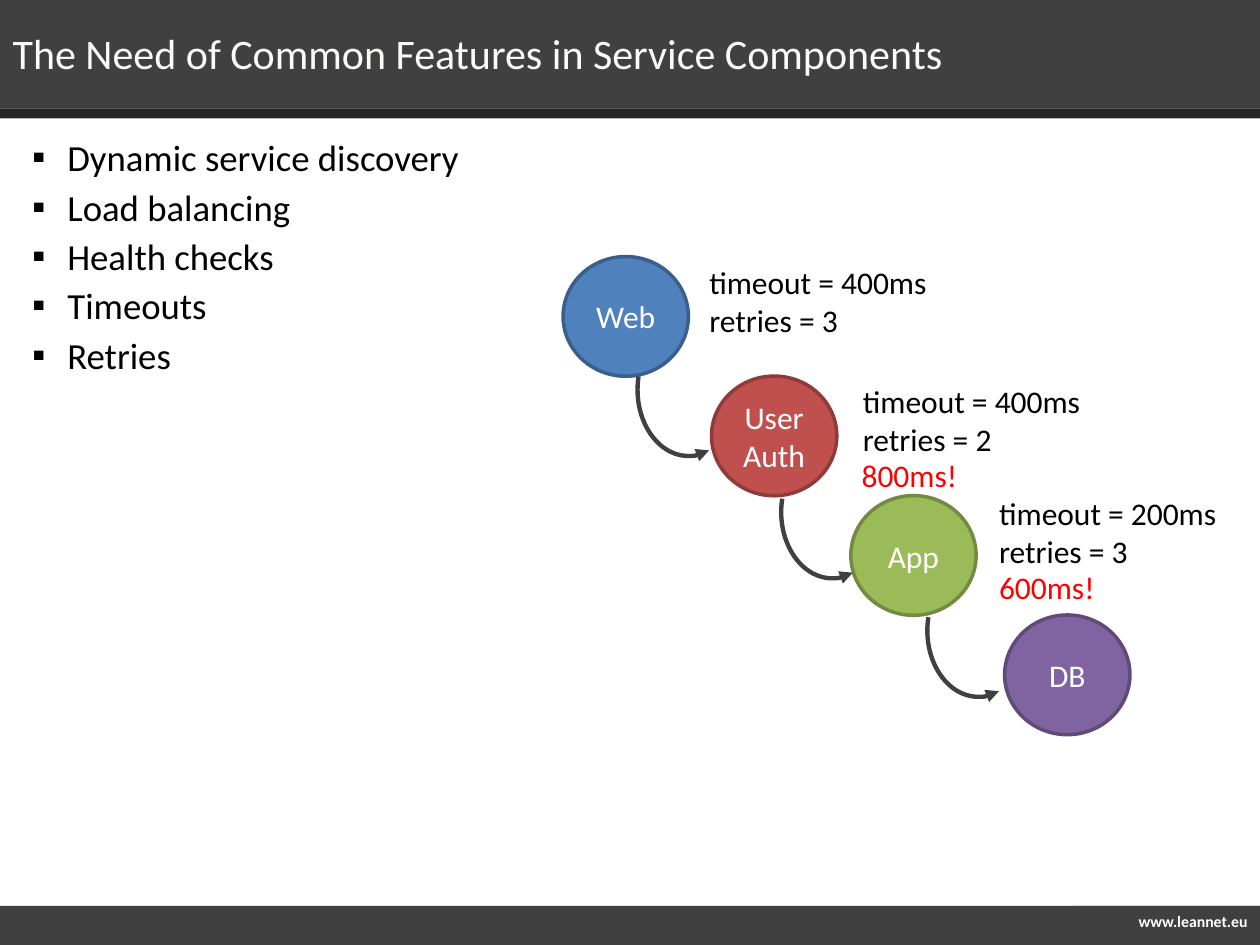
from pptx import Presentation
from pptx.dml.color import RGBColor
from pptx.enum.shapes import MSO_SHAPE
from pptx.enum.text import MSO_ANCHOR, MSO_AUTO_SIZE, PP_ALIGN
from pptx.oxml.ns import qn
from pptx.util import Pt
from lxml.etree import SubElement

COLORS = {
    "band": "404040", "stripe": "262626", "title": "FAFBF9",
    "white": "FFFFFF", "black": "000000", "alert": "FF0000",
    "blue": "4F81BD", "blue edge": "3A5F8C",
    "red": "C0504D", "red edge": "8E3B39",
    "green": "9BBB59", "green edge": "738A42",
    "purple": "8064A2", "purple edge": "5F4A78",
}


def rgb(name):
    return RGBColor.from_string(COLORS[name])


def add_text(para, text, size, color, bold=False):
    span = para.add_run()
    span.text = text
    span.font.name = "Calibri"
    span.font.size = Pt(size)
    span.font.bold = bold
    span.font.color.rgb = rgb(color)


deck = Presentation()
deck.slide_width, deck.slide_height = Pt(720), Pt(540)
page = deck.slides.add_slide(deck.slide_layouts[1])
shapes = page.shapes
title, body = page.placeholders

# Header and footer bands
for left, top, width, height, color, text in [
    (0, 0, 720, 62, "band", ""),
    (0, 517.7, 720, 22.3, "band", ""),
    (613.4, 517.7, 106.6, 22.3, "band", "www.leannet.eu"),
    (0, 62, 720, 5.7, "stripe", ""),
]:
    band = shapes.add_shape(MSO_SHAPE.RECTANGLE, Pt(left), Pt(top), Pt(width), Pt(height))
    band.shadow.inherit = False
    band.fill.solid()
    band.fill.fore_color.rgb = rgb(color)
    band.line.fill.background()
    if text:
        band.text_frame.vertical_anchor = MSO_ANCHOR.TOP
        para = band.text_frame.paragraphs[0]
        para.alignment = PP_ALIGN.RIGHT
        add_text(para, text, 9, "white", bold=True)

# Title and list stand in front of the bands
for holder, left, top, width, height in [
    (title, 0, 0, 720, 60),
    (body, 13.5, 74.2, 386, 309.6),
]:
    holder.left, holder.top, holder.width, holder.height = Pt(left), Pt(top), Pt(width), Pt(height)
    holder.text_frame.auto_size = MSO_AUTO_SIZE.NONE
    shapes._spTree.append(holder._element)

title.text_frame.vertical_anchor = MSO_ANCHOR.MIDDLE
para = title.text_frame.paragraphs[0]
para.alignment = PP_ALIGN.LEFT
add_text(para, "The Need of Common Features in Service Components", 24, "title")

frame = body.text_frame
frame.margin_left = frame.margin_right = Pt(5)
frame.margin_top = frame.margin_bottom = Pt(3)
features = ["Dynamic service discovery", "Load balancing", "Health checks", "Timeouts", "Retries"]
for index, feature in enumerate(features):
    para = frame.paragraphs[0] if index == 0 else frame.add_paragraph()
    para.space_before = Pt(3 if index else 0)
    properties = para._p.get_or_add_pPr()
    properties.set("marL", str(Pt(20)))
    properties.set("indent", str(-Pt(20)))
    SubElement(properties, qn("a:buFont"), typeface="Calibri")
    SubElement(properties, qn("a:buChar"), char="▪")
    add_text(para, feature, 21, "black")

# Chain of services
for left, top, name, color in [
    (321.8, 146.6, "Web", "blue"),
    (406.6, 214.9, "User Auth", "red"),
    (486.2, 283.2, "App", "green"),
    (574.1, 351.4, "DB", "purple"),
]:
    circle = shapes.add_shape(MSO_SHAPE.OVAL, Pt(left), Pt(top), Pt(71.6), Pt(68.4))
    circle.shadow.inherit = False
    circle.fill.solid()
    circle.fill.fore_color.rgb = rgb(color)
    circle.line.color.rgb = rgb(color + " edge")
    circle.line.width = Pt(2)
    frame = circle.text_frame
    frame.margin_left = frame.margin_right = 0
    frame.word_wrap = True
    frame.vertical_anchor = MSO_ANCHOR.MIDDLE
    para = frame.paragraphs[0]
    para.alignment = PP_ALIGN.CENTER
    add_text(para, name, 18, "white")

# Curved arrows from each service to the next
for left, top in [(364.3, 185), (446.4, 254.9), (529.9, 322.6)]:
    arc = shapes.add_shape(MSO_SHAPE.ARC, Pt(left), Pt(top), Pt(58.3), Pt(75.6))
    arc.shadow.inherit = False
    arc.adjustments[0], arc.adjustments[1] = 42.74, 117.05
    arc.fill.background()
    arc.line.color.rgb = rgb("band")
    arc.line.width = Pt(2.5)
    SubElement(arc.line._get_or_add_ln(), qn("a:headEnd"), type="triangle")

# Settings beside the services, and the resulting delays
for left, top, width, height, color, lines in [
    (398.2, 146.9, 140.4, 51, "black", ["timeout = 400ms", "retries = 3"]),
    (486, 214.9, 140.4, 51, "black", ["timeout = 400ms", "retries = 2"]),
    (563.8, 278.6, 140.4, 51, "black", ["timeout = 200ms", "retries = 3"]),
    (563.8, 321.1, 69.8, 29, "alert", ["600ms!"]),
    (485.3, 257, 69.8, 29, "alert", ["800ms!"]),
]:
    frame = shapes.add_textbox(Pt(left), Pt(top), Pt(width), Pt(height)).text_frame
    frame.word_wrap = False
    for index, line in enumerate(lines):
        para = frame.paragraphs[0] if index == 0 else frame.add_paragraph()
        add_text(para, line, 18, color)

deck.save("out.pptx")
